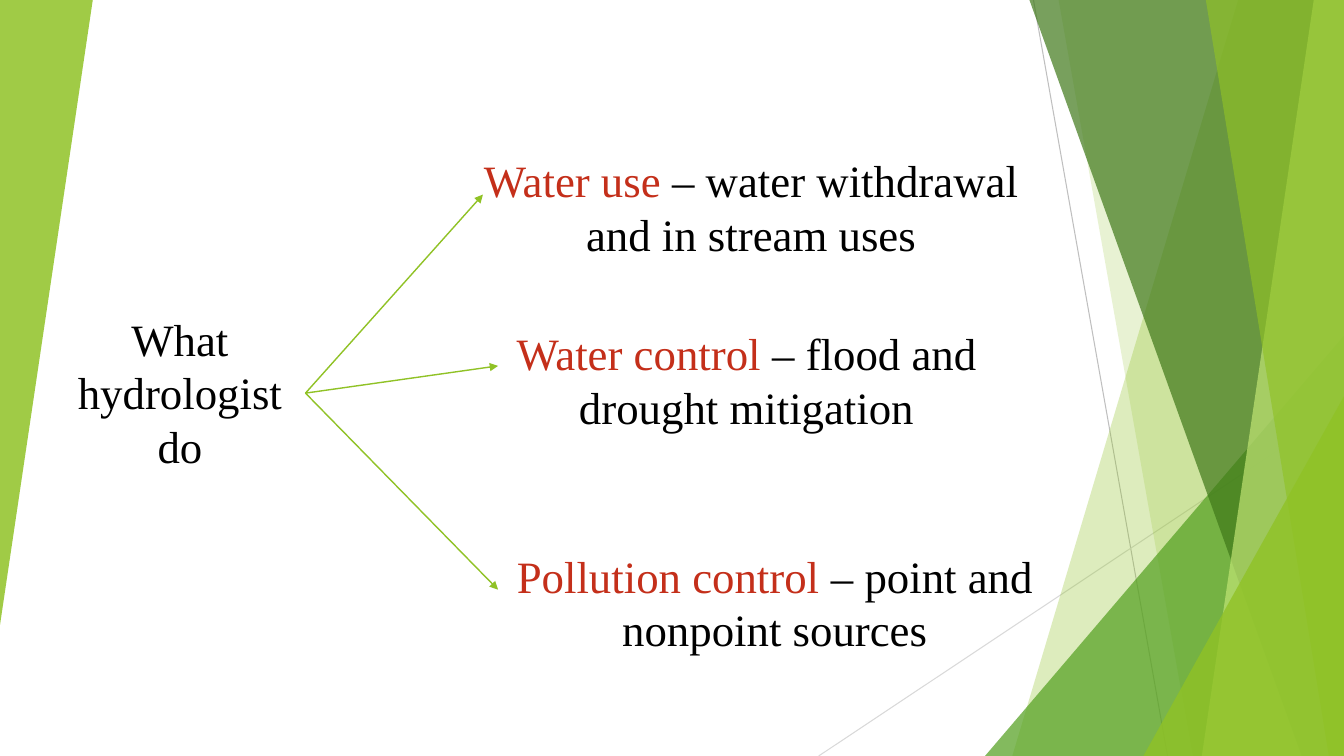
from lxml import etree
from pptx import Presentation
from pptx import util as u
from pptx.dml.color import RGBColor
from pptx.enum import shapes, text
from pptx.oxml.ns import qn

COLORS = {
    "lime": "90C226", "pale lime": "C0E474", "green": "54A021", "forest": "3F7819",
    "red": "C42F1A", "black": "000000", "gray": "BFBFBF", "light gray": "D9D9D9",
}
FONT = "Times New Roman"
WIDTH, HEIGHT = 13.33, 7.5

# Left corners at top and bottom of each band that runs to the right edge
BANDS_BEHIND = [(12.28, 10.04, "lime", 30), (10.5, 11.83, "lime", 20)]
BANDS_FRONT = [
    (10.21, 12.91, "forest", 70),
    (13.03, 11.92, "pale lime", 70),
    (11.96, 13.18, "lime", 65),
]
# Box, arrow tip, highlighted term, explanation
TASKS = [
    ((4.59, 1.47, 5.72, 1.18), (4.79, 1.93),
     "Water use", " – water withdrawal and in stream uses"),
    ((4.32, 3.18, 6.17, 1.18), (4.94, 3.63),
     "Water control", " – flood and drought mitigation"),
    ((4.32, 5.39, 6.73, 1.18), (4.94, 5.85),
     "Pollution control", " – point and nonpoint sources"),
]


def rgb(color):
    return RGBColor.from_string(COLORS[color])


def paint(shape, color, opacity):
    """Fill a shape without outline, at an opacity in percent."""
    shape.shadow.inherit = False
    shape.line.fill.background()
    shape.fill.solid()
    shape.fill.fore_color.rgb = rgb(color)
    fill_color = shape.fill._xPr.find(qn("a:solidFill"))[0]
    etree.SubElement(fill_color, qn("a:alpha"), val=str(opacity * 1000))


def add_band(page, top_left, bottom_left, color, opacity):
    outline = page.shapes.build_freeform(
        u.Inches(top_left), u.Inches(0), scale=1.0)
    corners = [(WIDTH, 0), (WIDTH, HEIGHT), (bottom_left, HEIGHT)]
    outline.add_line_segments([(u.Inches(x), u.Inches(y)) for x, y in corners])
    paint(outline.convert_to_shape(), color, opacity)


def add_wedge(page, area, color, opacity, rotation=0):
    """Add a right triangle whose apex is above its right corner."""
    wedge = page.shapes.add_shape(
        shapes.MSO_SHAPE.ISOSCELES_TRIANGLE, *map(u.Inches, area))
    wedge.adjustments[0] = 1.0
    wedge.rotation = rotation
    paint(wedge, color, opacity)


def add_line(page, start, end, color, width):
    line = page.shapes.add_connector(
        shapes.MSO_CONNECTOR.STRAIGHT, *map(u.Inches, start + end))
    line.line.color.rgb = rgb(color)
    line.line.width = u.Pt(width)
    etree.SubElement(line._element.spPr, qn("a:effectLst"))
    return line


def add_arrow(page, hub, tip):
    """Point from the right side of the hub box to the tip."""
    arrow = add_line(page, (3.03, 3.9), tip, "lime", 1)
    arrow.begin_connect(hub, 3)
    etree.SubElement(arrow.line._get_or_add_ln(), qn("a:tailEnd"), type="triangle")


def add_label(page, area, spans):
    box = page.shapes.add_textbox(*map(u.Inches, area))
    box.text_frame.word_wrap = True
    para = box.text_frame.paragraphs[0]
    para.alignment = text.PP_ALIGN.CENTER
    for words, color in spans:
        span = para.add_run()
        span.text = words
        span.font.name = FONT
        span.font.size = u.Pt(32)
        span.font.color.rgb = rgb(color)
    return box


def add_backdrop(page):
    add_line(page, (10.25, 0), (11.58, HEIGHT), "gray", 0.75)
    add_line(page, (WIDTH, 4.03), (8.12, HEIGHT), "light gray", 0.75)
    for band in BANDS_BEHIND:
        add_band(page, *band)
    add_wedge(page, (9.77, 3.33, 3.56, 4.17), "green", 72)
    for band in BANDS_FRONT:
        add_band(page, *band)
    add_wedge(page, (11.34, 3.93, 1.99, 3.57), "lime", 80)
    add_wedge(page, (0, 0, 0.92, 6.2), "lime", 85, rotation=180)


def main():
    deck = Presentation()
    deck.slide_width, deck.slide_height = u.Inches(WIDTH), u.Inches(HEIGHT)
    page = deck.slides.add_slide(deck.slide_layouts[6])
    add_backdrop(page)
    hub = add_label(page, (0.54, 3.04, 2.49, 1.72), [("What hydrologist do", "black")])
    for area, tip, term, explanation in TASKS:
        add_arrow(page, hub, tip)
        add_label(page, area, [(term, "red"), (explanation, "black")])
    deck.save("out.pptx")


if __name__ == "__main__":
    main()
